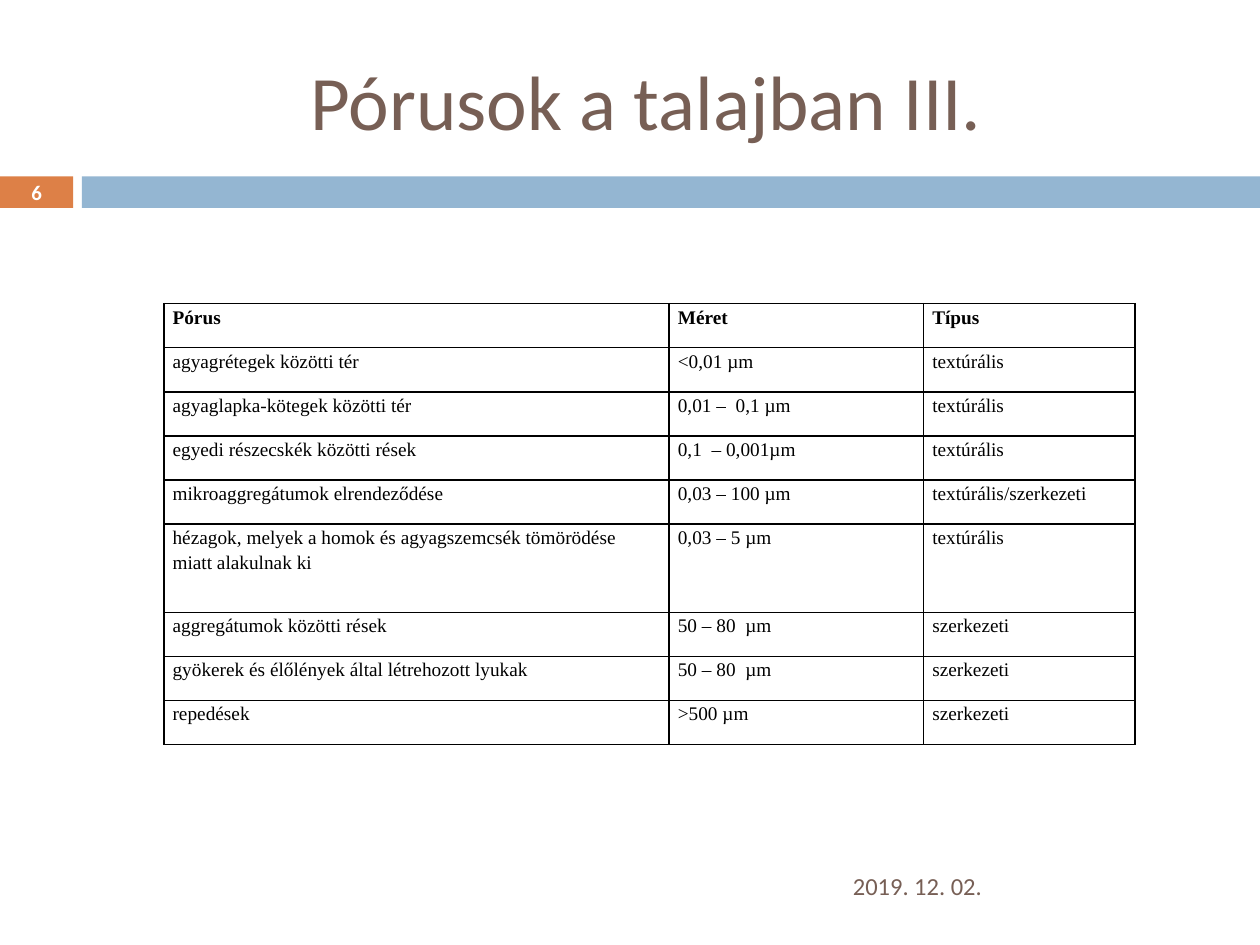
"""Build a slide with a table of soil pore sizes and types."""
from lxml.etree import SubElement
from pptx import Presentation
from pptx.dml.color import RGBColor
from pptx.enum.shapes import MSO_SHAPE
from pptx.enum.text import MSO_ANCHOR, PP_ALIGN
from pptx.oxml.ns import qn
from pptx.util import Inches, Pt

COLORS = {"orange": "DD8047", "blue": "94B6D2", "brown": "775F55",
          "white": "FFFFFF", "black": "000000"}
ROWS = [
    ("Pórus", "Méret", "Típus"),
    ("agyagrétegek közötti tér", "<0,01 µm", "textúrális"),
    ("agyaglapka-kötegek közötti tér", "0,01 –  0,1 µm", "textúrális"),
    ("egyedi részecskék közötti rések", "0,1  – 0,001µm", "textúrális"),
    ("mikroaggregátumok elrendeződése", "0,03 – 100 µm", "textúrális/szerkezeti"),
    ("hézagok, melyek a homok és agyagszemcsék tömörödése miatt alakulnak ki",
     "0,03 – 5 µm", "textúrális"),
    ("aggregátumok közötti rések", "50 – 80  µm", "szerkezeti"),
    ("gyökerek és élőlények által létrehozott lyukak", "50 – 80  µm", "szerkezeti"),
    ("repedések", ">500 µm", "szerkezeti"),
]
WIDTHS = [4.01, 2.02, 1.68]
HEIGHTS = [0.7 if row == 5 else 0.35 for row in range(len(ROWS))]


def write(frame, text, size, color, font="Calibri", bold=False, align=PP_ALIGN.LEFT):
    frame.text = text
    frame.word_wrap = True
    para = frame.paragraphs[0]
    para.alignment = align
    style = para.runs[0].font
    style.name, style.size, style.bold = font, Pt(size), bold
    style.color.rgb = RGBColor.from_string(COLORS[color])


def border(cell):
    props = cell._tc.get_or_add_tcPr()
    for place, side in enumerate(("a:lnL", "a:lnR", "a:lnT", "a:lnB")):
        line = SubElement(props, qn(side), w=str(Pt(1)))
        fill = SubElement(line, qn("a:solidFill"))
        SubElement(fill, qn("a:srgbClr"), val=COLORS["black"])
        props.insert(place, line)


deck = Presentation()
deck.slide_width, deck.slide_height = Inches(10), Inches(7.5)
slide = deck.slides.add_slide(deck.slide_layouts[5])

for left, width, color in ((0, 0.58, "orange"), (0.65, 9.35, "blue")):
    bar = slide.shapes.add_shape(MSO_SHAPE.RECTANGLE, Inches(left), Inches(1.4),
                                 Inches(width), Inches(0.25))
    bar.shadow.inherit = False
    bar.fill.solid()
    bar.fill.fore_color.rgb = RGBColor.from_string(COLORS[color])
    bar.line.fill.background()

title = slide.shapes.title
title.left, title.top = Inches(0.67), Inches(0.25)
title.width, title.height = Inches(8.92), Inches(1.08)
title.text_frame.vertical_anchor = MSO_ANCHOR.MIDDLE
write(title.text_frame, "Pórusok a talajban III.", 44, "brown", align=PP_ALIGN.CENTER)

date = slide.shapes.add_textbox(Inches(6.67), Inches(6.83), Inches(2.92), Inches(0.4))
date.text_frame.vertical_anchor = MSO_ANCHOR.MIDDLE
write(date.text_frame, "2019. 12. 02.", 14, "brown")

number = slide.shapes.add_textbox(Inches(0), Inches(1.39), Inches(0.58), Inches(0.27))
number.text_frame.vertical_anchor = MSO_ANCHOR.MIDDLE
write(number.text_frame, "6", 11.9, "white", bold=True, align=PP_ALIGN.CENTER)

table = slide.shapes.add_table(len(ROWS), len(WIDTHS), Inches(1.3), Inches(2.41),
                               Inches(sum(WIDTHS)), Inches(sum(HEIGHTS))).table
table.horz_banding = False
for column, width in zip(table.columns, WIDTHS):
    column.width = Inches(width)
for row, height in zip(table.rows, HEIGHTS):
    row.height = Inches(height)
for r, texts in enumerate(ROWS):
    for c, text in enumerate(texts):
        cell = table.cell(r, c)
        cell.margin_left = cell.margin_right = Inches(0.07)
        cell.margin_top = cell.margin_bottom = 0
        cell.fill.background()
        write(cell.text_frame, text, 11, "black", "Times New Roman", r == 0)
        cell.text_frame.paragraphs[0].line_spacing = 1.15
        border(cell)

deck.save("out.pptx")
